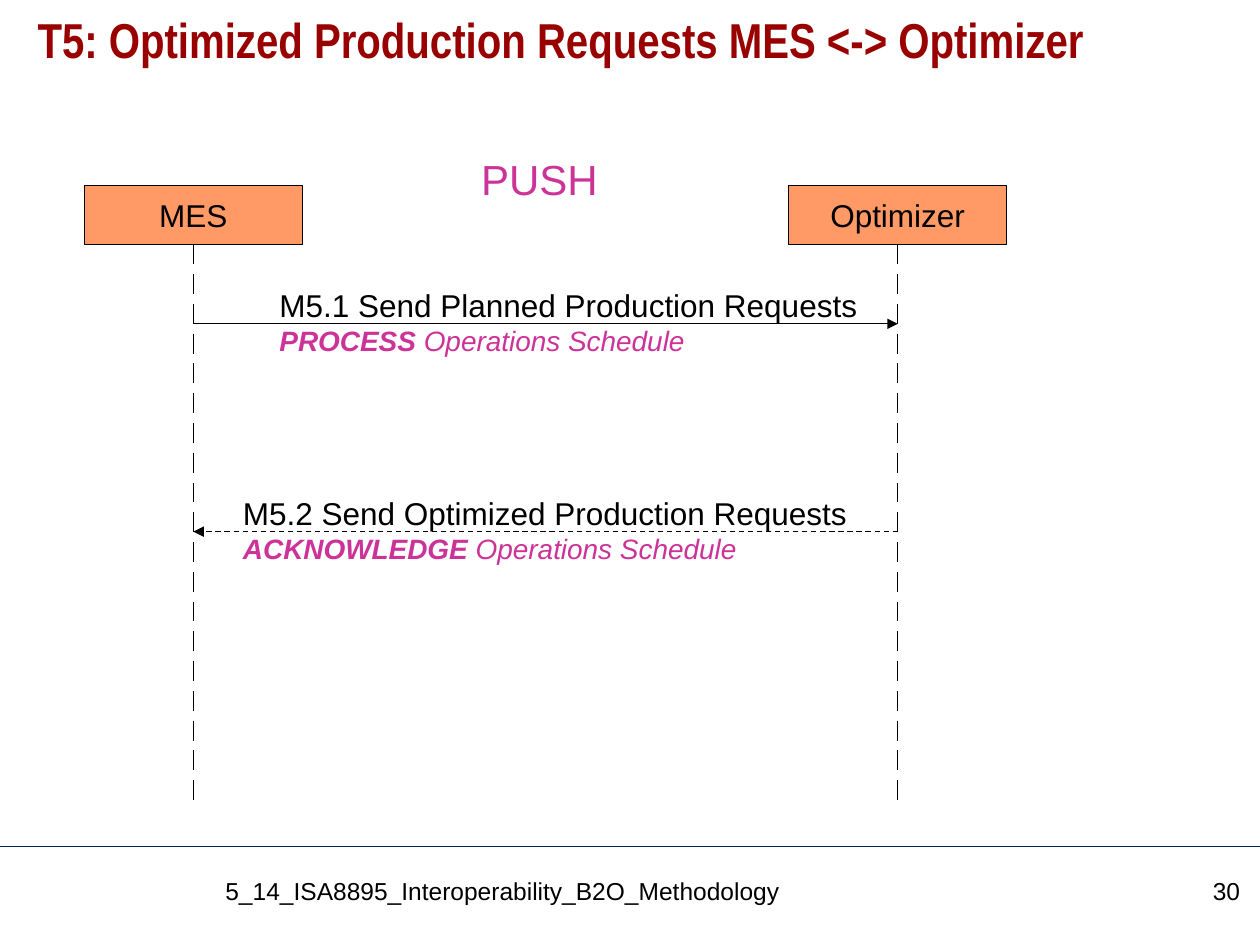
from lxml import etree
from pptx import Presentation
from pptx import util as u
from pptx.dml.color import RGBColor
from pptx.enum import dml, shapes, text
from pptx.oxml.ns import qn

# The page is a grid of 100 columns by 75 rows.
COLUMNS, ROWS = 100, 75
CELL = u.Inches(0.1)
COLORS = {
    "title": "990000",
    "ink": "000000",
    "accent": "CC3399",
    "actor": "FF9966",
    "rule": "002060",
}


def cells(*counts):
    return [round(count * CELL) for count in counts]


def color(name):
    return RGBColor.from_string(COLORS[name])


def style(font, size, ink="ink", face="Arial", bold=None, italic=None):
    font.name, font.size, font.bold, font.italic = face, u.Pt(size), bold, italic
    font.color.rgb = color(ink)


def add_line(parent, start, end, ink="ink", dash=None, arrow=False):
    line = parent.shapes.add_connector(
        shapes.MSO_CONNECTOR.STRAIGHT, *cells(*start, *end))
    line.line.color.rgb = color(ink)
    line.line.width = u.Pt(0.75)
    if dash:
        line.line.dash_style = dash
    if arrow:
        etree.SubElement(line.line._get_or_add_ln(), qn("a:tailEnd"), type="triangle")
    etree.SubElement(line._element.spPr, qn("a:effectLst"))
    return line


def add_text(page, box, words, size, ink="ink", face="Arial", bold=None,
             align=text.PP_ALIGN.LEFT, wrap=True):
    frame = page.shapes.add_textbox(*cells(*box)).text_frame
    frame.word_wrap = wrap
    if not wrap:
        frame.auto_size = text.MSO_AUTO_SIZE.SHAPE_TO_FIT_TEXT
    para = frame.paragraphs[0]
    para.text, para.alignment = words, align
    style(para.font, size, ink, face, bold)
    return frame


def add_actor(page, box, name, bottom):
    """Place a named box with a lifeline of dashes down to bottom; return the lifeline's column."""
    left, top, width, height = box
    actor = page.shapes.add_shape(shapes.MSO_SHAPE.RECTANGLE, *cells(*box))
    actor.shadow.inherit = False
    actor.fill.solid()
    actor.fill.fore_color.rgb = color("actor")
    actor.line.color.rgb = color("ink")
    actor.line.width = u.Pt(0.75)
    frame = actor.text_frame
    frame.word_wrap = False
    frame.vertical_anchor = text.MSO_ANCHOR.MIDDLE
    para = frame.paragraphs[0]
    para.text, para.alignment = name, text.PP_ALIGN.CENTER
    style(para.font, 18)

    # Each gap is half as long as a dash.
    dashes, share = 19, 2 / 3
    column, start = left + width / 2, top + height
    pitch = (bottom - start) / (dashes - 1 + share)
    lifeline = page.shapes.add_group_shape()
    for index in range(dashes):
        row = start + index * pitch
        dash = add_line(lifeline, (column, row), (column, row + share * pitch))
        if index == 0:
            dash.begin_connect(actor, 2)
    return column


def add_message(page, box, label, verb, noun, margin, indent, source, target, dash=None):
    """Place an arrow through the box's middle row, its label above and its verb below."""
    row = box[1] + 3.5
    add_line(page, (source, row), (target, row), dash=dash, arrow=True)
    frame = add_text(page, box, label, 18, wrap=False)
    action = frame.add_paragraph()
    for words, bold in ((verb + " ", True), (noun, False)):
        span = action.add_run()
        span.text = words
        style(span.font, 16, "accent", bold=bold, italic=True)
    for para in frame.paragraphs:
        para.level = 1
        properties = para._p.get_or_add_pPr()
        properties.set("marL", str(u.Inches(margin)))
        properties.set("indent", str(u.Inches(indent)))


def add_header(page, box, words):
    frame = add_text(page, box, words, 28, "title", "Arial Narrow", True)
    frame.paragraphs[0].line_spacing = 0.9


def add_footer(page, box, words, number):
    left, top, width, height = box
    add_line(page, (left, top), (left + width, top), "rule")
    row, depth = top + 1.8, 4.5
    add_text(page, (left + 16.9, row, 72.1, depth), words, 14)
    add_text(page, (left + 90.2, row, 9.2, depth), number, 14,
             align=text.PP_ALIGN.RIGHT)


def add_sequence(page, box):
    left, top, width, height = box
    bottom = top + height
    actor_width, actor_height, actor_top = 17.3, 4.7, top + 3
    mes, optimizer = (
        add_actor(page, (column, actor_top, actor_width, actor_height), name, bottom)
        for column, name in ((left, "MES"), (left + width - actor_width, "Optimizer")))
    add_text(page, (left + 30.5, top, 11.3, 5), "PUSH", 24, "accent", wrap=False)
    add_message(page, (left + 9.5, top + 10.5, 53.3, 6.7),
                "M5.1 Send Planned Production Requests",
                "PROCESS", "Operations Schedule", 0.5, 0, mes, optimizer)
    add_message(page, (left + 6.6, top + 27, 57.1, 6.7),
                "M5.2 Send Optimized Production Requests",
                "ACKNOWLEDGE", "Operations Schedule", 1, -0.5, optimizer, mes,
                dml.MSO_LINE.DASH)


def main():
    deck = Presentation()
    deck.slide_width, deck.slide_height = cells(COLUMNS, ROWS)
    page = deck.slides.add_slide(deck.slide_layouts[6])
    add_header(page, (2, 0.8, 96.1, 8.3),
               "T5: Optimized Production Requests MES <-> Optimizer")
    add_sequence(page, (6.7, 11.7, 73.2, 51.8))
    add_footer(page, (0, 67.2, COLUMNS, 7.8),
               "5_14_ISA8895_Interoperability_B2O_Methodology", "30")
    deck.save("out.pptx")


if __name__ == "__main__":
    main()
